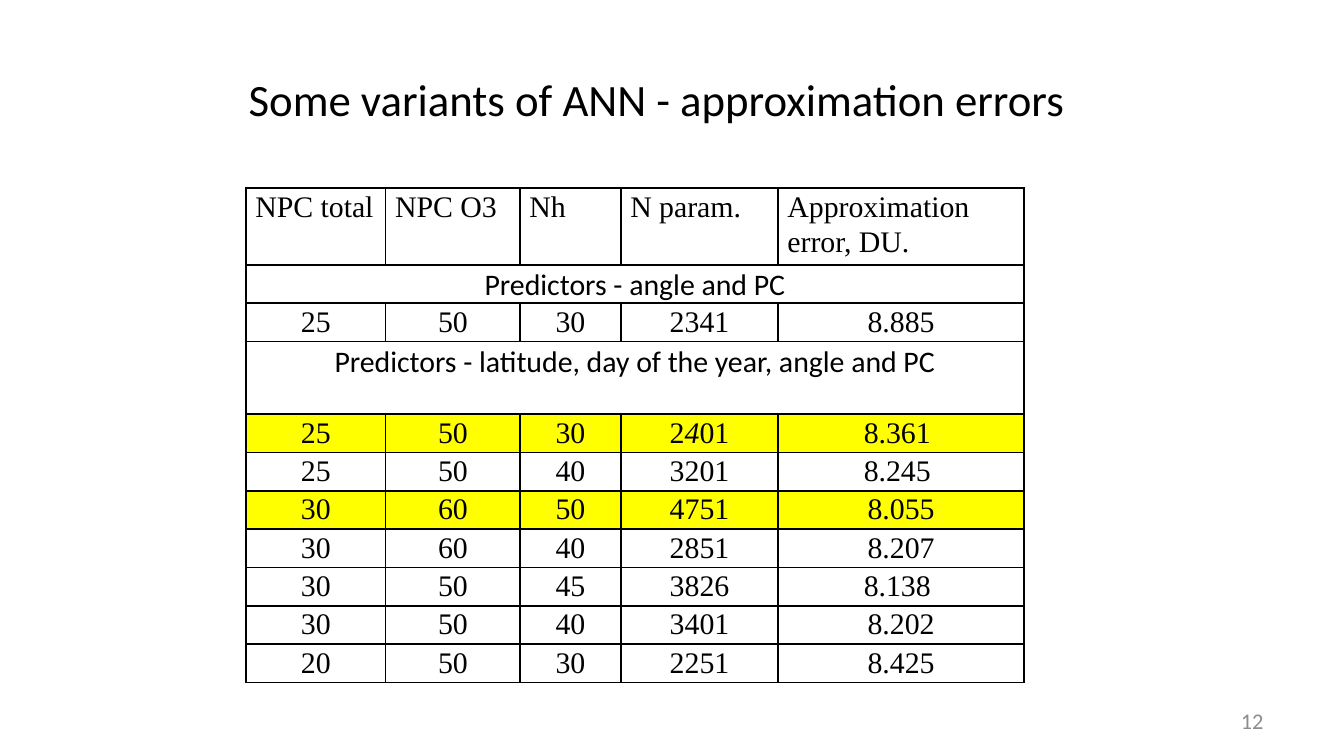
import pptx
import pptx.dml.color
import pptx.enum.text
import pptx.oxml
import pptx.oxml.ns
import pptx.util
from pptx.util import Inches

SERIF = "Times New Roman"
SANS = "Calibri"
BLACK = "000000"
YELLOW = "FFFF00"
ALIGN = pptx.enum.text.PP_ALIGN
ANCHOR = pptx.enum.text.MSO_ANCHOR

COLUMN_WIDTHS = [1.04, 1, 0.75, 1.17, 1.83]
HEADER = ["NPC total", "NPC O3", "Nh", "N param.", "Approximation error, DU."]
# A row with a single entry spans the whole table.
ROWS = [
    HEADER,
    ["Predictors - angle and PC"],
    ["25", "50", "30", "2341", "8.885"],
    ["Predictors - latitude, day of the year, angle and PC"],
    ["25", "50", "30", ["2", "4", "01"], "8.361 "],
    ["25", "50", "40", "3201", "8.245 "],
    ["30", "60", "50", "4751", "8.055"],
    ["30", "60", "40", "2851", "8.207"],
    ["30", "50", "45", "3826", "8.138 "],
    ["30", "50", "40", "3401", "8.202"],
    ["20", "50", "30", "2251", "8.425"],
]
TALL_ROWS = {0: 0.57, 3: 0.54}
HIGHLIGHTED_ROWS = {4, 6}


def rgb(value):
    return pptx.dml.color.RGBColor.from_string(value)


def add_span(para, text, size, font, color=BLACK):
    span = para.add_run()
    span.text = text
    span.font.size = pptx.util.Pt(size)
    span.font.name = font
    span.font.color.rgb = rgb(color)
    return span


def add_borders(cell, color=BLACK, points=1):
    """Outline all four sides of a table cell."""
    properties = cell._tc.get_or_add_tcPr()
    for position, side in enumerate(("lnL", "lnR", "lnT", "lnB")):
        line = pptx.oxml.parse_xml(
            f'<a:{side} {pptx.oxml.ns.nsdecls("a")} w="{pptx.util.Pt(points)}">'
            f'<a:solidFill><a:srgbClr val="{color}"/></a:solidFill></a:{side}>')
        properties.insert(position, line)


def fill_cell(cell, parts, font, align):
    """Write text into a cell; in a list of parts every second one is italic."""
    para = cell.text_frame.paragraphs[0]
    para.alignment = align
    para.line_spacing = 1.07
    para.space_after = pptx.util.Pt(8)
    if isinstance(parts, str):
        parts = [parts]
    for index, text in enumerate(parts):
        span = add_span(para, text, 16, font)
        if index % 2:
            span.font.italic = True


def add_title(page, left, top, width, height):
    title = page.shapes.title
    title.left, title.top = Inches(left), Inches(top)
    title.width, title.height = Inches(width), Inches(height)
    frame = title.text_frame
    frame.word_wrap = False
    frame.vertical_anchor = ANCHOR.TOP
    frame.auto_size = pptx.enum.text.MSO_AUTO_SIZE.SHAPE_TO_FIT_TEXT
    para = frame.paragraphs[0]
    para.alignment = ALIGN.LEFT
    add_span(para, "Some variants of ANN - approximation errors", 24, SANS)


def add_error_table(page, left, top, width, height):
    table = page.shapes.add_table(
        len(ROWS), len(COLUMN_WIDTHS),
        Inches(left), Inches(top), Inches(width), Inches(height)).table
    table.first_row = table.horz_banding = False
    for column, column_width in zip(table.columns, COLUMN_WIDTHS):
        column.width = Inches(column_width)

    plain_height = (height - sum(TALL_ROWS.values())) / (len(ROWS) - len(TALL_ROWS))
    for index, (row, entries) in enumerate(zip(table.rows, ROWS)):
        row.height = Inches(TALL_ROWS.get(index, plain_height))
        for cell in row.cells:
            cell.margin_left = cell.margin_right = Inches(0.07)
            cell.margin_top = cell.margin_bottom = 0
            if index in HIGHLIGHTED_ROWS:
                cell.fill.solid()
                cell.fill.fore_color.rgb = rgb(YELLOW)
            else:
                cell.fill.background()
            add_borders(cell)

        is_band = len(entries) == 1
        if is_band:
            table.cell(index, 0).merge(table.cell(index, len(COLUMN_WIDTHS) - 1))
        font = SANS if is_band else SERIF
        align = ALIGN.JUSTIFY if entries is HEADER else ALIGN.CENTER
        for column_index, entry in enumerate(entries):
            fill_cell(table.cell(index, column_index), entry, font, align)


def add_page_number(page, left, top, width, height):
    box = page.shapes.add_textbox(
        Inches(left), Inches(top), Inches(width), Inches(height))
    frame = box.text_frame
    frame.word_wrap = True
    frame.vertical_anchor = ANCHOR.MIDDLE
    para = frame.paragraphs[0]
    para.alignment = ALIGN.RIGHT
    add_span(para, "12", 12, SANS, "8C8C8C")


def main():
    deck = pptx.Presentation()
    deck.slide_width = Inches(10)
    deck.slide_height = deck.slide_width * 9 // 16
    title_only = deck.slide_layouts[5]
    page = deck.slides.add_slide(title_only)
    add_error_table(page, 1.83, 1.4, 5.79, 3.68)
    add_title(page, 1.75, 0.48, 6.33, 0.5)
    add_page_number(page, 7.17, 5.21, 2.33, 0.3)
    deck.save("out.pptx")


if __name__ == "__main__":
    main()
